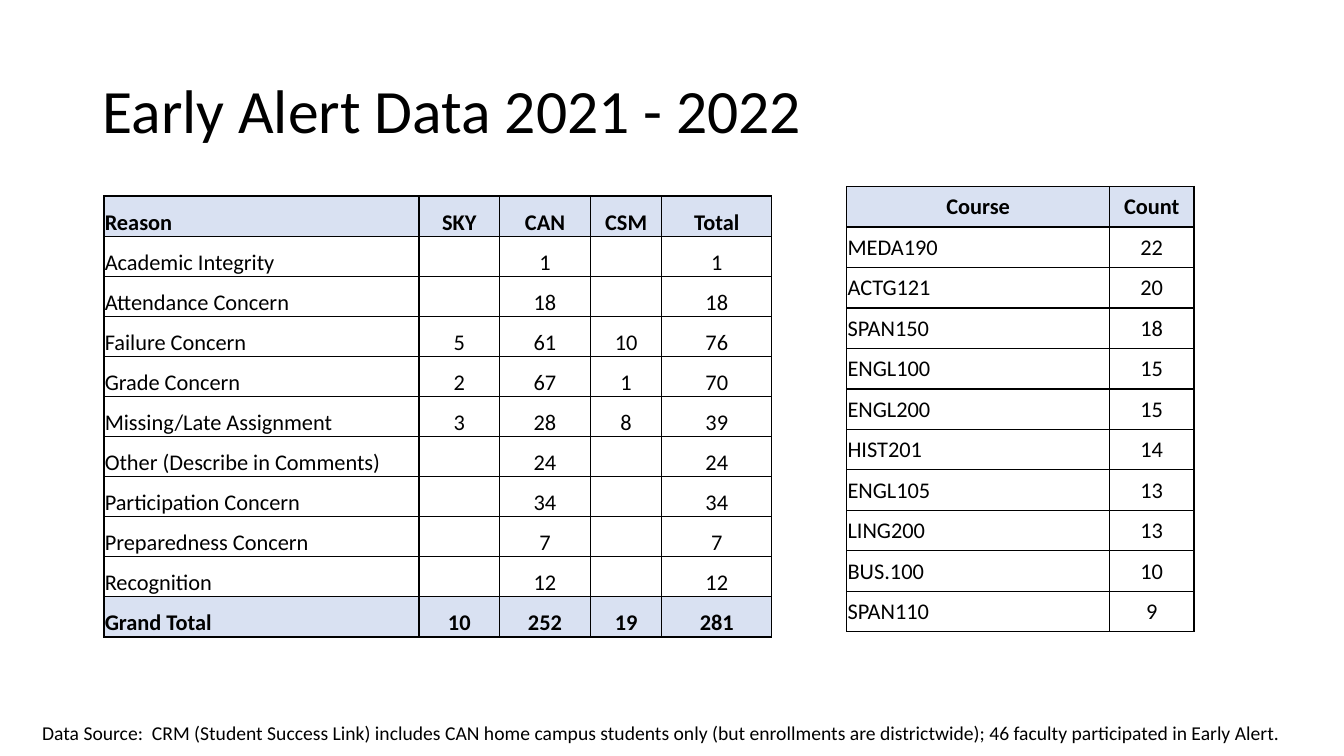
from lxml.etree import SubElement
from pptx import Presentation
from pptx.dml.color import RGBColor
from pptx.enum.text import MSO_ANCHOR, MSO_AUTO_SIZE, PP_ALIGN
from pptx.oxml.ns import qn
from pptx.util import Cm, Pt

TITLE = "Early Alert Data 2021 - 2022"
REASONS = [
    ("Reason", "SKY", "CAN", "CSM", "Total"),
    ("Academic Integrity", "", 1, "", 1),
    ("Attendance Concern", "", 18, "", 18),
    ("Failure Concern", 5, 61, 10, 76),
    ("Grade Concern", 2, 67, 1, 70),
    ("Missing/Late Assignment", 3, 28, 8, 39),
    ("Other (Describe in Comments)", "", 24, "", 24),
    ("Participation Concern", "", 34, "", 34),
    ("Preparedness Concern", "", 7, "", 7),
    ("Recognition", "", 12, "", 12),
    ("Grand Total", 10, 252, 19, 281),
]
COURSES = [
    ("Course", "Count"),
    ("MEDA190", 22),
    ("ACTG121", 20),
    ("SPAN150", 18),
    ("ENGL100", 15),
    ("ENGL200", 15),
    ("HIST201", 14),
    ("ENGL105", 13),
    ("LING200", 13),
    ("BUS.100", 10),
    ("SPAN110", 9),
]
SOURCE_NOTE = (
    "Data Source:  CRM (Student Success Link) includes CAN home campus students only "
    "(but enrollments are districtwide); 46 faculty participated in Early Alert."
)
COLORS = {"text": "000000", "border": "000000", "band": "D9E1F2"}
FONT = "Calibri"


def style_paragraph(paragraph, size, bold=False, align=PP_ALIGN.LEFT):
    paragraph.alignment = align
    font = paragraph.font
    font.name, font.size, font.bold = FONT, Pt(size), bold
    font.color.rgb = RGBColor.from_string(COLORS["text"])


def add_borders(cell):
    properties = cell._tc.get_or_add_tcPr()
    for side in ("a:lnL", "a:lnR", "a:lnT", "a:lnB"):
        line = SubElement(properties, qn(side), w=str(Pt(1)))
        fill = SubElement(line, qn("a:solidFill"))
        SubElement(fill, qn("a:srgbClr"), val=COLORS["border"])


def add_data_table(slide, rows, left, top, widths, row_height, anchor, banded, centered_head):
    """Draw rows as a bordered grid; banded holds the indexes of bold, filled rows."""
    table = slide.shapes.add_table(
        len(rows), len(widths), Cm(left), Cm(top),
        Cm(sum(widths)), Cm(row_height * len(rows)),
    ).table
    table.first_row = table.horz_banding = False
    for column, width in zip(table.columns, widths):
        column.width = Cm(width)
    for r, values in enumerate(rows):
        table.rows[r].height = Cm(row_height)
        for c, value in enumerate(values):
            cell = table.cell(r, c)
            cell.margin_left = cell.margin_right = cell.margin_top = Cm(0.02)
            cell.margin_bottom = 0
            cell.vertical_anchor = anchor
            add_borders(cell)
            if r in banded:
                cell.fill.solid()
                cell.fill.fore_color.rgb = RGBColor.from_string(COLORS["band"])
            else:
                cell.fill.background()
            cell.text = str(value)
            centered = c > 0 or (r == 0 and centered_head)
            style_paragraph(cell.text_frame.paragraphs[0], 16, r in banded,
                            PP_ALIGN.CENTER if centered else PP_ALIGN.LEFT)


def main():
    presentation = Presentation()
    presentation.slide_width, presentation.slide_height = Cm(33.87), Cm(19.05)
    slide = presentation.slides.add_slide(presentation.slide_layouts[5])

    title = slide.shapes.title
    title.left, title.top, title.width, title.height = Cm(2.33), Cm(1.01), Cm(29.21), Cm(3.68)
    title.text = TITLE
    title.text_frame.vertical_anchor = MSO_ANCHOR.MIDDLE
    heading = title.text_frame.paragraphs[0]
    heading.line_spacing = 0.9
    style_paragraph(heading, 44)

    add_data_table(slide, REASONS, 2.62, 4.94, (7.94, 2.03, 2.29, 1.8, 2.77), 1.01,
                   MSO_ANCHOR.BOTTOM, {0, len(REASONS) - 1}, centered_head=False)
    add_data_table(slide, COURSES, 21.34, 4.7, (6.62, 2.13), 1.02,
                   MSO_ANCHOR.MIDDLE, {0}, centered_head=True)

    note = slide.shapes.add_textbox(Cm(0.81), Cm(18.03), Cm(34.11), Cm(0.86)).text_frame
    note.word_wrap = True
    note.auto_size = MSO_AUTO_SIZE.SHAPE_TO_FIT_TEXT
    note.text = SOURCE_NOTE
    style_paragraph(note.paragraphs[0], 14)

    presentation.save("out.pptx")


if __name__ == "__main__":
    main()
